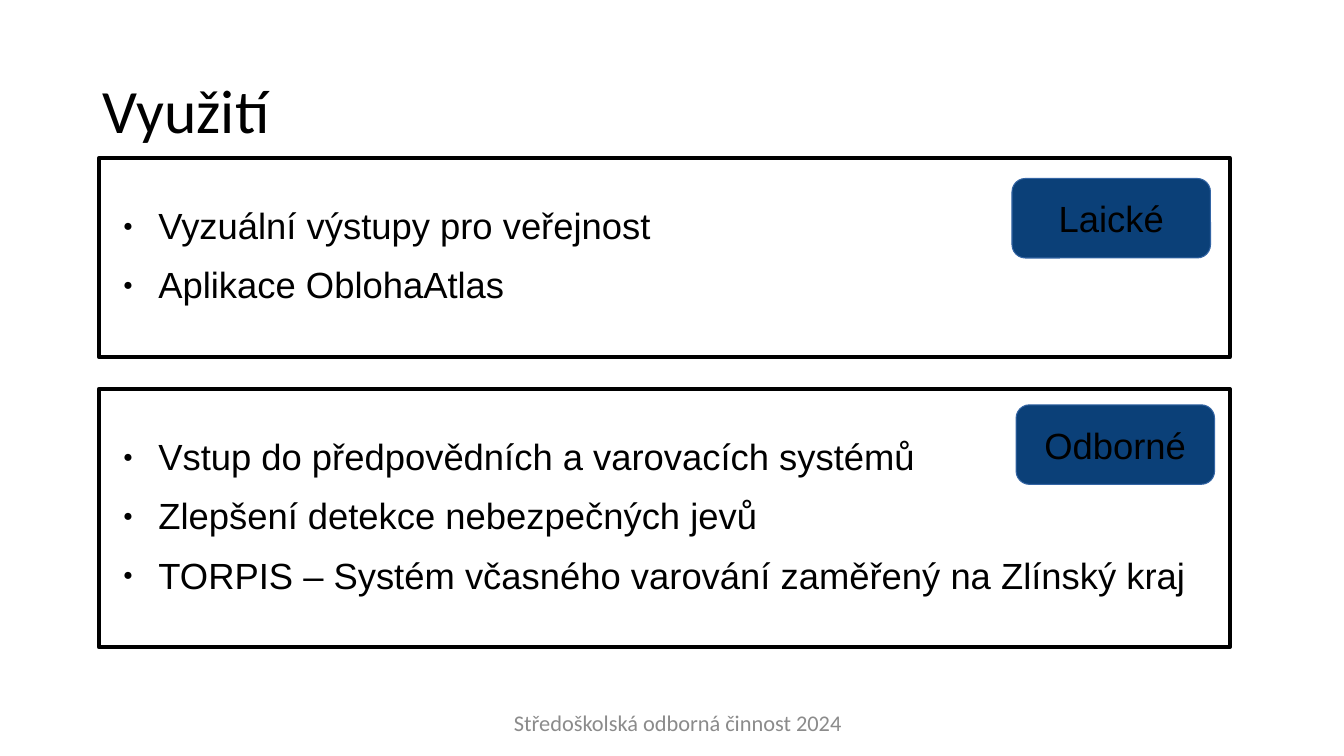
from dataclasses import dataclass, field

import pptx
import pptx.dml.color
import pptx.enum.shapes
import pptx.enum.text
import pptx.oxml.ns
import pptx.util
from lxml import etree

Pt = pptx.util.Pt
SHAPE = pptx.enum.shapes.MSO_SHAPE
ALIGN = pptx.enum.text.PP_ALIGN
COLORS = {"text": "000000", "footer": "8B8B8B", "badge": "0B4078", "badge_line": "3465A4"}


@dataclass
class TextStyle:
    font: str
    size: float
    color: str = "text"
    margins: tuple[float, float] = (7.2, 3.6)
    paragraph: dict = field(default_factory=dict)
    bullets: bool = False


@dataclass
class Panel:
    top: float
    height: float
    lines: list[str]
    badge: str
    badge_left: float
    badge_top: float


TITLE = TextStyle("Calibri", 44, paragraph={"line_spacing": 0.9})
FOOTER = TextStyle("Calibri", 16, "footer", paragraph={"alignment": ALIGN.CENTER})
BADGE = TextStyle("Arial", 26, paragraph={"alignment": ALIGN.CENTER})
BODY = TextStyle("Arial", 26, margins=(8.64, 5.04), bullets=True,
                 paragraph={"alignment": ALIGN.LEFT, "line_spacing": 0.9})

PANELS = [
    Panel(113, 142, ["Vyzuální výstupy pro veřejnost", "Aplikace OblohaAtlas"],
          "Laické", 722.9, 127.5),
    Panel(277.9, 184.3, ["Vstup do předpovědních a varovacích systémů",
                         "Zlepšení detekce nebezpečných jevů",
                         "TORPIS – Systém včasného varování zaměřený na Zlínský kraj"],
          "Odborné", 725.8, 289.2),
]


def rgb(name: str) -> pptx.dml.color.RGBColor:
    return pptx.dml.color.RGBColor.from_string(COLORS[name])


def add_bullet(p) -> None:
    pPr = p._p.get_or_add_pPr()
    pPr.set("marL", str(Pt(33.84)))
    pPr.set("indent", str(-Pt(25.2)))
    qn = pptx.oxml.ns.qn
    color = etree.SubElement(pPr, qn("a:buClr"))
    etree.SubElement(color, qn("a:srgbClr"), val=COLORS["text"])
    etree.SubElement(pPr, qn("a:buSzPct"), val="45000")
    etree.SubElement(pPr, qn("a:buFont"), typeface="Arial")
    etree.SubElement(pPr, qn("a:buChar"), char="●")


def write(tf, lines: list[str], style: TextStyle) -> None:
    side, edge = map(Pt, style.margins)
    frame = {"word_wrap": True, "vertical_anchor": pptx.enum.text.MSO_ANCHOR.MIDDLE,
             "margin_left": side, "margin_right": side,
             "margin_top": edge, "margin_bottom": edge}
    for name, value in frame.items():
        setattr(tf, name, value)
    for i, line in enumerate(lines):
        p = tf.paragraphs[0] if i == 0 else tf.add_paragraph()
        if style.bullets:
            add_bullet(p)
        for name, value in style.paragraph.items():
            setattr(p, name, value)
        if i:
            p.space_before = Pt(14.2)
        r = p.add_run()
        r.text = line
        r.font.name, r.font.size = style.font, Pt(style.size)
        r.font.color.rgb = rgb(style.color)


def add_text(s, box: tuple[float, ...], text: str, style: TextStyle) -> None:
    write(s.shapes.add_textbox(*map(Pt, box)).text_frame, [text], style)


def add_box(s, kind, box: tuple[float, ...], line: str, width: float):
    sp = s.shapes.add_shape(kind, *map(Pt, box))
    sp.shadow.inherit = False
    sp.fill.background()
    sp.line.color.rgb = rgb(line)
    sp.line.width = Pt(width)
    return sp


def add_panel(s, panel: Panel) -> None:
    sp = add_box(s, SHAPE.RECTANGLE, (70.6, panel.top, 807.8, panel.height), "text", 3)
    write(sp.text_frame, panel.lines, BODY)


def add_badge(s, panel: Panel) -> None:
    box = (panel.badge_left, panel.badge_top, 141.8, 56.8)
    sp = add_box(s, SHAPE.ROUNDED_RECTANGLE, box, "badge_line", 0)
    sp.fill.solid()
    sp.fill.fore_color.rgb = rgb("badge")
    write(sp.text_frame, [panel.badge], BADGE)


def main() -> None:
    prs = pptx.Presentation()
    prs.slide_width, prs.slide_height = Pt(960), Pt(540)
    s = prs.slides.add_slide(prs.slide_layouts[6])

    # Title and footer
    add_text(s, (66.2, 28.8, 828, 104.4), "Využití", TITLE)
    add_text(s, (359.3, 501.8, 249.8, 28.8), "Středoškolská odborná činnost 2024", FOOTER)

    # Panels with their badges
    for panel in PANELS:
        add_panel(s, panel)
        add_badge(s, panel)

    prs.save("out.pptx")


if __name__ == "__main__":
    main()
